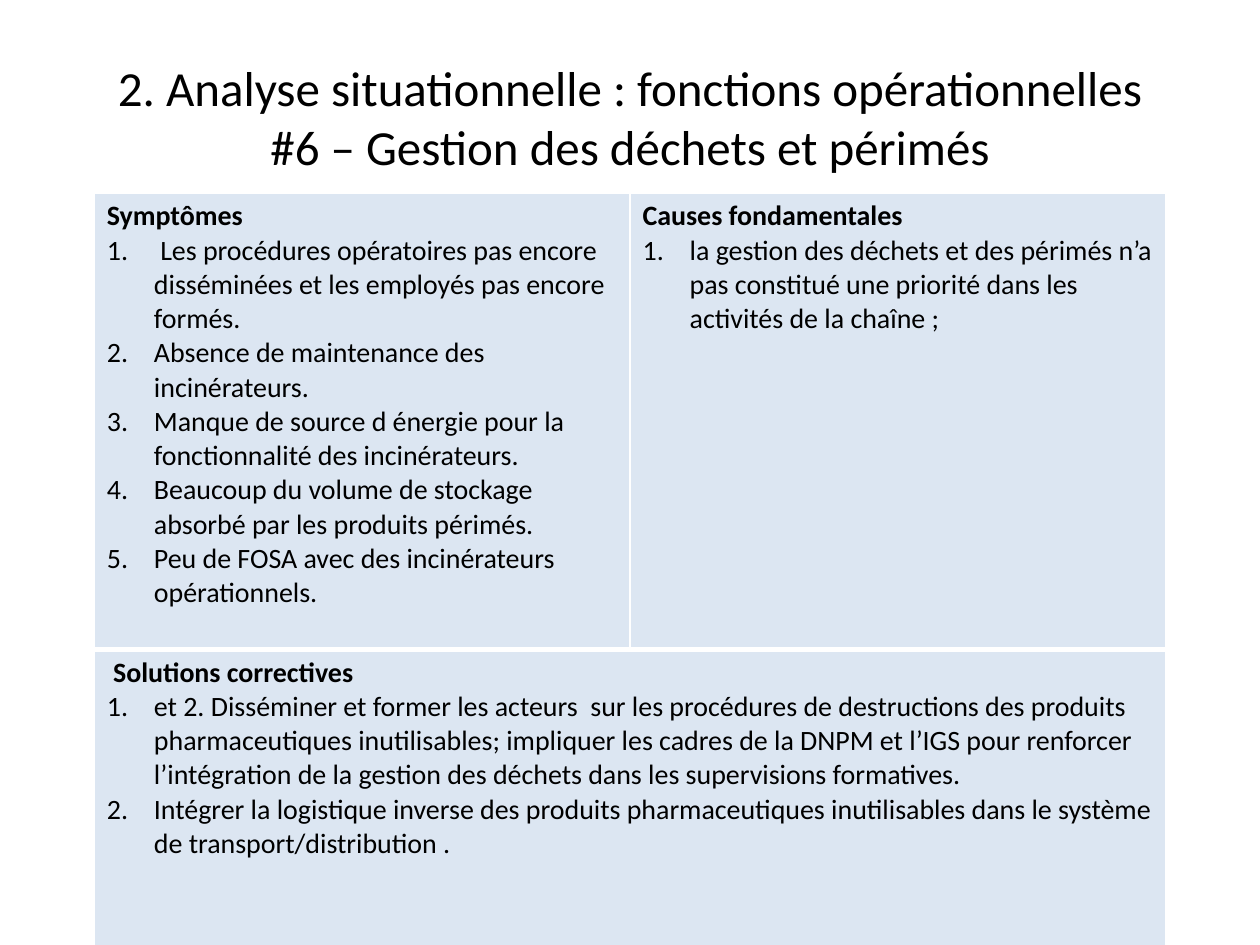
from typing import NamedTuple

from lxml import etree
from pptx import Presentation
from pptx.dml.color import RGBColor
from pptx.enum.text import MSO_ANCHOR, PP_ALIGN
from pptx.oxml.ns import qn
from pptx.util import Cm, Pt

MIDDLE = MSO_ANCHOR.MIDDLE
CENTER = PP_ALIGN.CENTER
FONT = "Calibri"
COLORS = {"text": "000000", "panel": "DCE6F2", "border": "FFFFFF"}
INDENT = Cm(0.95)


class Panel(NamedTuple):
    row: int
    col: int
    head: str
    items: list[str]
    top: int  # border widths in points
    bottom: int


PANELS = [
    Panel(0, 0, "Symptômes", [
        " Les procédures opératoires pas encore  disséminées et les employés "
        "pas encore formés.",
        "Absence de maintenance des incinérateurs.",
        "Manque de source d énergie pour la fonctionnalité des incinérateurs.",
        "Beaucoup du volume de stockage absorbé par les produits périmés.",
        "Peu de FOSA avec des incinérateurs opérationnels.",
    ], 1, 3),
    Panel(0, 1, "Causes fondamentales", [
        "la gestion des déchets et des périmés n’a pas constitué une priorité "
        "dans les activités de la chaîne ;",
    ], 1, 3),
    Panel(1, 0, " Solutions correctives", [
        "et 2. Disséminer et former les acteurs  sur les procédures de "
        "destructions des produits pharmaceutiques inutilisables; impliquer "
        "les cadres de la DNPM et l’IGS pour renforcer l’intégration de la "
        "gestion des déchets dans les supervisions formatives.",
        "Intégrer la logistique inverse des produits pharmaceutiques "
        "inutilisables dans le système de transport/distribution .",
    ], 3, 1),
]


def style(para, size: int, bold: bool = False) -> None:
    for run in para.runs:
        font = run.font
        font.name, font.size, font.bold = FONT, Pt(size), bold
        font.color.rgb = RGBColor.from_string(COLORS["text"])


def number(para) -> None:
    props = para._p.get_or_add_pPr()
    props.set("marL", str(INDENT))
    props.set("indent", str(-INDENT))
    etree.SubElement(props, qn("a:buFont"), typeface="+mj-lt")
    etree.SubElement(props, qn("a:buAutoNum"), type="arabicPeriod")


def edge(cell, side: str, width: int) -> None:
    props = cell._tc.get_or_add_tcPr()
    line = etree.SubElement(props, qn(f"a:ln{side}"), w=str(Pt(width)))
    fill = etree.SubElement(line, qn("a:solidFill"))
    etree.SubElement(fill, qn("a:srgbClr"), val=COLORS["border"])


def draw(table, panel: Panel) -> None:
    cell = table.cell(panel.row, panel.col)
    widths = {"L": 1, "R": 1, "T": panel.top, "B": panel.bottom}
    for side, width in widths.items():
        edge(cell, side, width)
    cell.fill.solid()
    cell.fill.fore_color.rgb = RGBColor.from_string(COLORS["panel"])

    frame = cell.text_frame
    frame.text = "\n".join([panel.head, *panel.items])
    head, *items = frame.paragraphs
    style(head, 16, bold=True)
    for para in items:
        number(para)
        style(para, 16)


def main() -> None:
    deck = Presentation()
    deck.slide_width, deck.slide_height = Cm(25.4), Cm(19.05)
    slide = deck.slides.add_slide(deck.slide_layouts[6])

    # Title
    title = slide.shapes.add_textbox(Cm(1.27), Cm(0.76), Cm(22.86), Cm(3.18))
    frame = title.text_frame
    frame.word_wrap = True
    frame.vertical_anchor = MIDDLE
    para = frame.paragraphs[0]
    para.text = ("2. Analyse situationnelle : fonctions opérationnelles\v"
                 "#6 – Gestion des déchets et périmés")
    para.alignment = CENTER
    style(para, 28)

    # Analysis table: two panels above one wide panel
    rows = [Cm(9.2), Cm(6.24)]
    table = slide.shapes.add_table(
        2, 2, Cm(1.9), Cm(3.89), Cm(21.6), sum(rows)).table
    table.first_row = table.horz_banding = False
    for row, height in zip(table.rows, rows):
        row.height = height
    table.cell(1, 0).merge(table.cell(1, 1))
    for panel in PANELS:
        draw(table, panel)

    deck.save("out.pptx")


if __name__ == "__main__":
    main()
